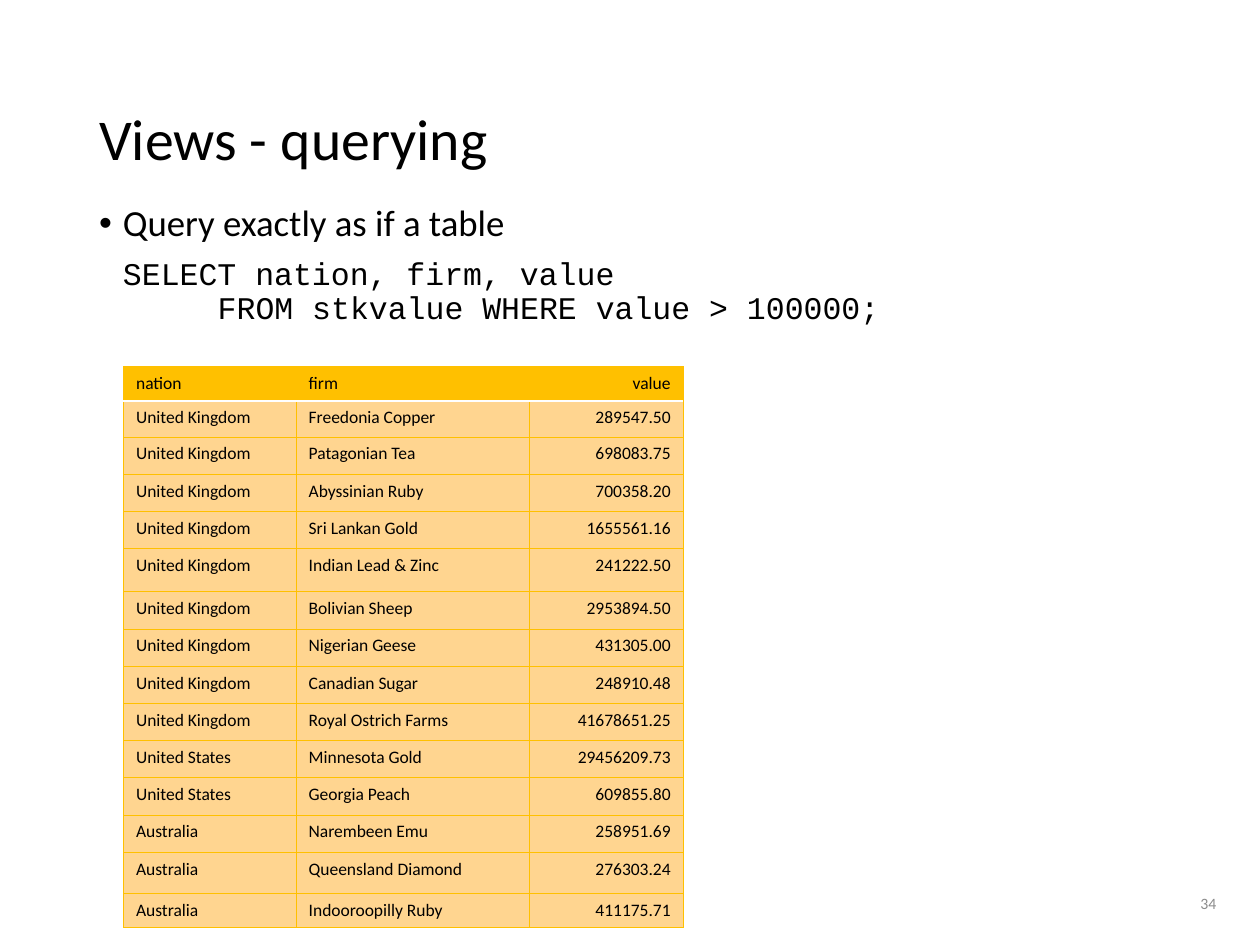
from lxml import etree
from pptx import Presentation
from pptx.dml.color import RGBColor
from pptx.enum.text import MSO_ANCHOR as Anchor, PP_ALIGN as Align
from pptx.oxml.ns import qn
from pptx.util import Cm, Pt

COLORS = {"text": "000000", "number": "8C8C8C", "gold": "FFC000",
          "cell": "FFD590", "white": "FFFFFF"}
SANS, MONO = "Calibri", "Courier New"

COL_WIDTHS = [3.48, 4.7, 3.1]
ROW_HEIGHT = 0.75
ROW_EXCEPTIONS = {0: 0.69, 1: 0.73, 5: 0.87, 13: 0.83, 14: 0.69}

HEADER = ("nation", "firm", "value")
HOLDINGS = {
    "United Kingdom": [
        ("Freedonia Copper", "289547.50"),
        ("Patagonian Tea", "698083.75"),
        ("Abyssinian Ruby", "700358.20"),
        ("Sri Lankan Gold", "1655561.16"),
        ("Indian Lead & Zinc", "241222.50"),
        ("Bolivian Sheep", "2953894.50"),
        ("Nigerian Geese", "431305.00"),
        ("Canadian Sugar", "248910.48"),
        ("Royal Ostrich Farms", "41678651.25"),
    ],
    "United States": [
        ("Minnesota Gold", "29456209.73"),
        ("Georgia Peach", "609855.80"),
    ],
    "Australia": [
        ("Narembeen Emu", "258951.69"),
        ("Queensland Diamond", "276303.24"),
        ("Indooroopilly Ruby", "411175.71"),
    ],
}


def rgb(name):
    return RGBColor.from_string(COLORS[name])


def add_text_box(s, left, top, width, height, anchor=Anchor.TOP):
    tf = s.shapes.add_textbox(Cm(left), Cm(top), Cm(width), Cm(height)).text_frame
    tf.word_wrap = True
    tf.vertical_anchor = anchor
    return tf


def write(p, text, size, font=SANS, color="text", align=Align.LEFT):
    p.text = text
    p.alignment = align
    p.font.size = Pt(size)
    p.font.name = font
    p.font.bold = False
    p.font.color.rgb = rgb(color)


def set_indent(p, margin, hanging=0, bullet=None):
    pPr = p._p.get_or_add_pPr()
    pPr.set("marL", str(Cm(margin)))
    pPr.set("indent", str(-Cm(hanging)))
    if bullet:
        font = etree.Element(qn("a:buFont"), typeface="Arial")
        char = etree.Element(qn("a:buChar"), char=bullet)
        pPr.find(qn("a:defRPr")).addprevious(font)
        font.addnext(char)


def add_body(s):
    tf = add_text_box(s, 1.75, 4.01, 22.56, 11)
    # text, size, font, space before, margin, hanging indent, bullet
    lines = [
        ("Query exactly as if a table", 21, SANS, 7.5, 0.48, 0.48, "•"),
        ("SELECT nation, firm, value", 18, MONO, 7.5, 0.48, 0, None),
        ("FROM stkvalue WHERE value > 100000;", 18, MONO, 0, 2.39, 0, None),
    ]
    for i, (text, size, font, before, margin, hanging, bullet) in enumerate(lines):
        p = tf.add_paragraph() if i else tf.paragraphs[0]
        write(p, text, size, font)
        p.line_spacing = 0.9
        p.space_before = Pt(before)
        set_indent(p, margin, hanging, bullet)


def set_borders(cell, **sides):
    """Draw cell borders; each side is given as (color name, points)."""
    tcPr = cell._tc.get_or_add_tcPr()
    for side in "LRTB":
        color, width = sides.get(side, ("gold", 0.5))
        ln = etree.SubElement(tcPr, qn(f"a:ln{side}"), w=str(Pt(width)))
        fill = etree.SubElement(ln, qn("a:solidFill"))
        etree.SubElement(fill, qn("a:srgbClr"), val=COLORS[color])


def add_holdings_table(s):
    rows = [HEADER] + [(nation, *firm) for nation, firms in HOLDINGS.items()
                       for firm in firms]
    heights = [ROW_EXCEPTIONS.get(i, ROW_HEIGHT) for i in range(len(rows))]
    table = s.shapes.add_table(len(rows), len(HEADER), Cm(2.49), Cm(7.39),
                               Cm(sum(COL_WIDTHS)), Cm(sum(heights))).table
    table.first_row = table.horz_banding = False
    for column, width in zip(table.columns, COL_WIDTHS):
        column.width = Cm(width)
    rule = ("white", 1)
    for i, values in enumerate(rows):
        table.rows[i].height = Cm(heights[i])
        for j, value in enumerate(values):
            cell = table.cell(i, j)
            p = cell.text_frame.paragraphs[0]
            write(p, value, 10, align=Align.RIGHT if j == 2 else Align.LEFT)
            p.space_before = Pt(2)
            set_borders(cell, **({"B": rule} if i == 0 else {"T": rule} if i == 1 else {}))
            cell.fill.solid()
            cell.fill.fore_color.rgb = rgb("cell" if i else "gold")


def main():
    prs = Presentation()
    prs.slide_width, prs.slide_height = Cm(25.4), Cm(19.05)
    s = prs.slides.add_slide(prs.slide_layouts[6])

    title = add_text_box(s, 1.75, 1.02, 21.89, 3.68, Anchor.MIDDLE).paragraphs[0]
    write(title, "Views - querying", 33)
    title.line_spacing = 0.9
    add_body(s)
    number = add_text_box(s, 19.05, 17.7, 5.72, 1.02, Anchor.MIDDLE).paragraphs[0]
    write(number, "34", 9, color="number", align=Align.RIGHT)
    add_holdings_table(s)

    prs.save("out.pptx")


if __name__ == "__main__":
    main()
